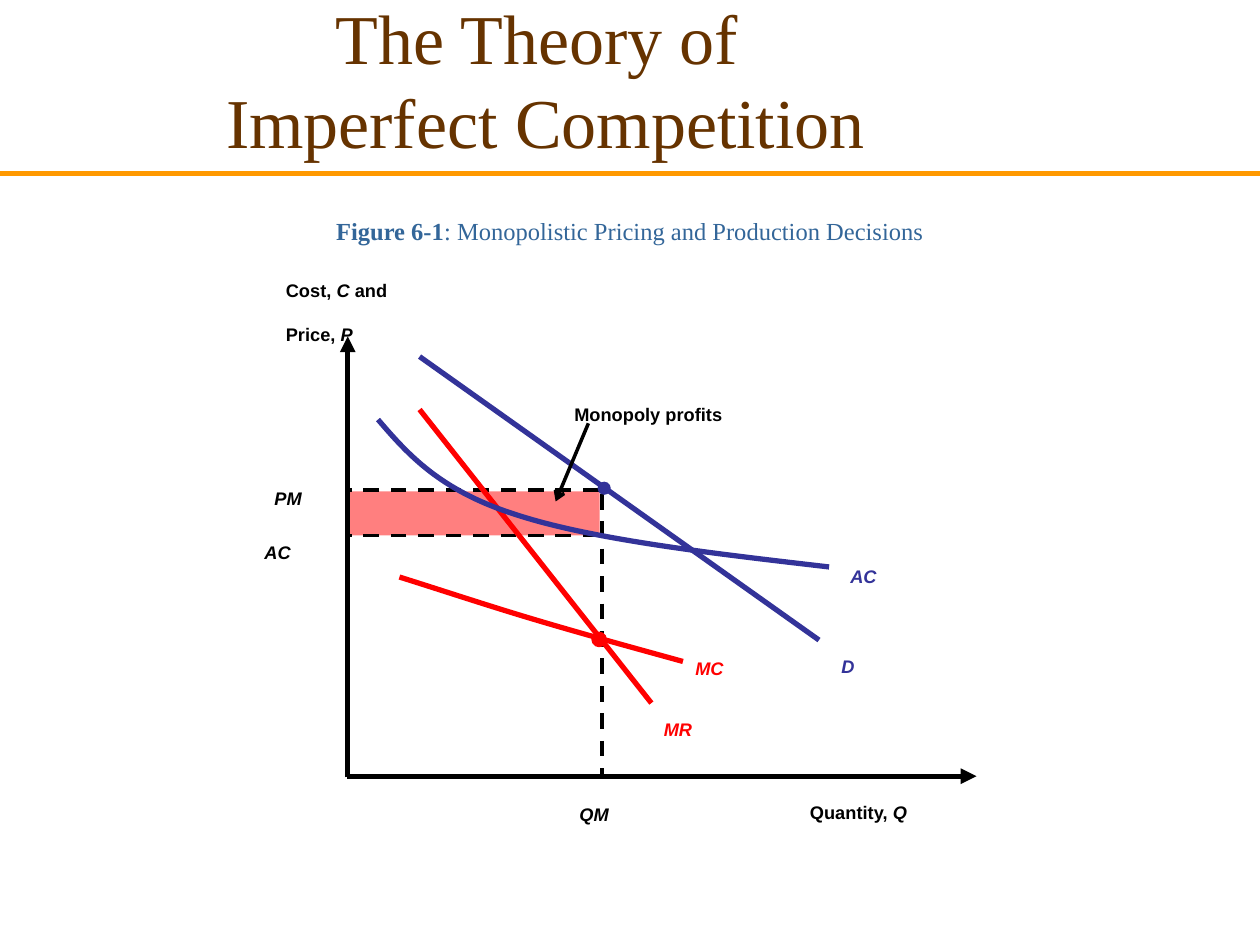
from pptx import Presentation
from pptx.dml.color import RGBColor
from pptx.enum.dml import MSO_LINE_DASH_STYLE as Dash
from pptx.enum.shapes import MSO_CONNECTOR as Connector, MSO_SHAPE as Shape
from pptx.enum.text import MSO_ANCHOR as Anchor, PP_ALIGN as Align
from pptx.oxml.ns import qn
from pptx.util import Inches, Pt
from lxml.etree import SubElement

BLACK = RGBColor(0x00, 0x00, 0x00)
BROWN = RGBColor(0x66, 0x33, 0x00)
ORANGE = RGBColor(0xFF, 0x99, 0x00)
STEEL = RGBColor(0x33, 0x66, 0x99)
BLUE = RGBColor(0x33, 0x33, 0x99)
RED = RGBColor(0xFF, 0x00, 0x00)
LABEL_RED = RGBColor(0xFF, 0x01, 0x01)

TITLE_FONT = {"name": "Times New Roman", "size": Pt(40)}
CAPTION_FONT = {"name": "Times New Roman", "size": Pt(14)}
LABEL_FONT = {"name": "Arial", "size": Pt(10.4), "bold": True}
ITALIC = {"italic": True}
BOLD = {"bold": True}

AXIS_X, AXIS_Y = 2.76, 6.16
PRICE_Y, COST_Y = 3.89, 4.25
QUANTITY_X = 4.78

# Left, top, width, colour, runs
LABELS = [
    (6.58, 5.00, 0.40, BLUE, [("D", ITALIC)]),
    (6.33, 6.16, 1.67, BLACK, [("Quantity, ", {}), ("Q", ITALIC)]),
    (4.46, 3.00, 2.23, BLACK, [("Monopoly profits", {})]),
    (2.00, 4.10, 0.58, BLACK, [("AC", ITALIC)]),
    (2.08, 3.67, 0.67, BLACK, [("PM", ITALIC)]),
    (4.50, 6.18, 0.58, BLACK, [("QM", ITALIC)]),
    (5.17, 5.50, 0.75, LABEL_RED, [("MR", ITALIC)]),
    (5.42, 5.02, 0.59, LABEL_RED, [("MC", ITALIC)]),
    (6.65, 4.29, 0.56, BLUE, [("AC", ITALIC)]),
]
MARGINAL_COST = [(3.17, 4.58), (3.52, 4.69), (3.88, 4.81), (4.25, 4.92),
                 (4.62, 5.03), (5.02, 5.14), (5.42, 5.25)]
AVERAGE_COST = [(3, 3.33), (3.24, 3.61), (3.49, 3.89), (4.08, 4.08),
                (4.68, 4.28), (5.63, 4.39), (6.58, 4.5)]


def apply_format(target, values):
    for name, value in values.items():
        setattr(target, name, value)


def add_text(slide, box, paragraphs, font, color, align=Align.LEFT, **frame_format):
    """Each paragraph is a list of (text, font changes) runs."""
    frame = slide.shapes.add_textbox(*map(Inches, box)).text_frame
    apply_format(frame, {"word_wrap": True, **frame_format})
    for index, runs in enumerate(paragraphs):
        paragraph = frame.add_paragraph() if index else frame.paragraphs[0]
        paragraph.alignment = align
        if index:
            paragraph.space_before = Pt(12.5)
        for text, changes in runs:
            if text == "\v":
                paragraph.add_line_break()
                continue
            run = paragraph.add_run()
            run.text = text
            apply_format(run.font, {**font, **changes})
            run.font.color.rgb = color


def add_label(slide, left, top, width, color, *paragraphs, height=0.4):
    add_text(slide, (left, top, width, height), paragraphs, LABEL_FONT, color,
             margin_top=Inches(0.22), margin_bottom=0)


def add_line(slide, start, end, color=BLACK, width=3, dash=None, arrow=None):
    line = slide.shapes.add_connector(Connector.STRAIGHT, *map(Inches, start + end))
    line.line.color.rgb = color
    line.line.width = Pt(width)
    if dash:
        line.line.dash_style = dash
    if arrow:
        SubElement(line.line._get_or_add_ln(), qn("a:tailEnd"), type=arrow)
    SubElement(line._element.spPr, qn("a:effectLst"))


def add_curve(slide, points, color):
    """Draw cubic Bézier segments: a start, then three points per segment."""
    start, *rest = [(Inches(x), Inches(y)) for x, y in points]
    builder = slide.shapes.build_freeform(*start)
    builder.add_line_segments(rest, close=False)
    curve = builder.convert_to_shape()
    outline = next(curve._element.iter(qn("a:path")))
    steps = outline.findall(qn("a:lnTo"))
    for first in range(0, len(steps), 3):
        segment = SubElement(outline, qn("a:cubicBezTo"))
        for step in steps[first:first + 3]:
            segment.append(step[0])
            outline.remove(step)
    curve.shadow.inherit = False
    curve.fill.background()
    curve.line.color.rgb = color
    curve.line.width = Pt(3)


def add_filled(slide, kind, box, color):
    shape = slide.shapes.add_shape(kind, *map(Inches, box))
    shape.shadow.inherit = False
    shape.fill.solid()
    shape.fill.fore_color.rgb = color
    return shape


def add_profit_area(slide):
    area = add_filled(slide, Shape.RECTANGLE, (2.77, 3.9, 1.99, 0.35), RED)
    area.line.fill.background()
    color = next(area._element.spPr.iter(qn("a:srgbClr")))
    SubElement(color, qn("a:alpha"), val="50000")


def add_point(slide, left, top, size, color):
    point = add_filled(slide, Shape.OVAL, (left, top, size, size), color)
    point.line.color.rgb = color
    point.line.width = Pt(1)


def add_heading(slide):
    add_line(slide, (0, 1.38), (10, 1.38), ORANGE)
    add_text(slide, (0.08, 0, 8.5, 1.25),
             [[("The Theory of ", {}), ("\v", {}), ("Imperfect Competition", {})]],
             TITLE_FONT, BROWN, Align.CENTER, vertical_anchor=Anchor.MIDDLE)
    add_text(slide, (0, 1.42, 10, 0.58),
             [[("Figure 6-1", BOLD),
               (": Monopolistic Pricing and Production Decisions", {})]],
             CAPTION_FONT, STEEL, Align.CENTER, vertical_anchor=Anchor.BOTTOM)


def add_axes(slide):
    add_line(slide, (2.75, AXIS_Y), (7.75, AXIS_Y), arrow="triangle")
    add_label(slide, 2.17, 2, 1.59, BLACK,
              [("Cost, ", {}), ("C", ITALIC), (" and", {})],
              [("Price, ", {}), ("P", ITALIC)], height=0.7)
    add_line(slide, (AXIS_X, 6.17), (AXIS_X, 2.67), arrow="triangle")


def main():
    deck = Presentation()
    deck.slide_width, deck.slide_height = Inches(10), Inches(7.5)
    slide = deck.slides.add_slide(deck.slide_layouts[6])

    add_profit_area(slide)
    add_heading(slide)
    add_line(slide, (3.33, 2.83), (6.5, 5.08), BLUE)
    add_axes(slide)
    for label in LABELS:
        add_label(slide, *label)
    add_line(slide, (4.67, 3.36), (4.41, 3.98), width=2, arrow="arrow")
    for start, end in [((4.75, COST_Y), (2.75, COST_Y)),
                       ((4.75, PRICE_Y), (2.75, PRICE_Y)),
                       ((QUANTITY_X, 3.92), (QUANTITY_X, 6.17))]:
        add_line(slide, start, end, width=2.25, dash=Dash.DASH)
    add_point(slide, 4.75, 3.83, 0.09, BLUE)
    add_line(slide, (3.33, 3.25), (5.17, 5.58), RED)
    add_curve(slide, MARGINAL_COST, RED)
    add_curve(slide, AVERAGE_COST, BLUE)
    add_point(slide, 4.7, 5.02, 0.11, RED)

    deck.save("out.pptx")


if __name__ == "__main__":
    main()
